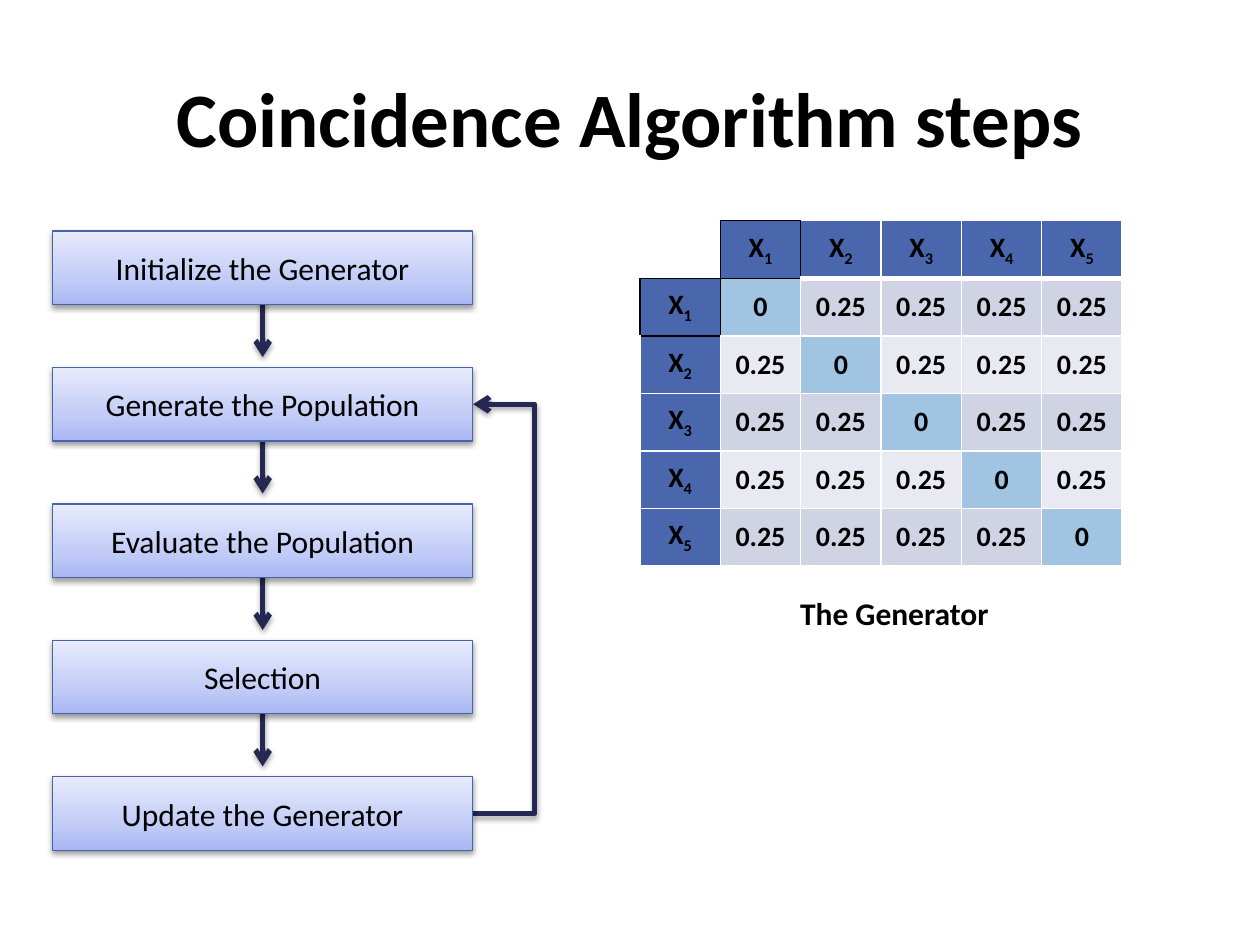
import copy

import pptx
import pptx.dml.color
import pptx.enum.shapes
import pptx.enum.text
import pptx.oxml
import pptx.oxml.ns
import pptx.util

Cm = pptx.util.Cm
Pt = pptx.util.Pt
RGBColor = pptx.dml.color.RGBColor
CENTER = pptx.enum.text.PP_ALIGN.CENTER
MIDDLE = pptx.enum.text.MSO_ANCHOR.MIDDLE
CONNECTOR = pptx.enum.shapes.MSO_CONNECTOR
qn = pptx.oxml.ns.qn
NS = pptx.oxml.ns.nsdecls("a")

BLACK = RGBColor(0x00, 0x00, 0x00)
WHITE = RGBColor(0xFF, 0xFF, 0xFF)
ARROW = RGBColor(0x24, 0x28, 0x52)
BOX_LINE = RGBColor(0x46, 0x63, 0xAB)
HEADER = RGBColor(0x4A, 0x66, 0xAC)
DIAGONAL = RGBColor(0xA1, 0xC4, 0xE3)
BAND_DARK = RGBColor(0xD0, 0xD3, 0xE3)
BAND_LIGHT = RGBColor(0xE9, 0xEA, 0xF1)
GRADIENT = [
    (0, RGBColor(0xA8, 0xB7, 0xF4)),
    (0.35, RGBColor(0xC2, 0xCC, 0xF6)),
    (1, RGBColor(0xE7, 0xEB, 0xFD)),
]

TITLE = "Coincidence Algorithm steps"
STEPS = [
    "Initialize the Generator",
    "Generate the Population",
    "Evaluate the Population",
    "Selection",
    "Update the Generator",
]
CAPTION = "The Generator"
GENERATOR = [
    ["0", "0.25", "0.25", "0.25", "0.25"],
    ["0.25", "0", "0.25", "0.25", "0.25"],
    ["0.25", "0.25", "0", "0.25", "0.25"],
    ["0.25", "0.25", "0.25", "0", "0.25"],
    ["0.25", "0.25", "0.25", "0.25", "0"],
]

BOX_LEFT, BOX_TOP, BOX_W, BOX_H, PITCH = 1.06, 4.66, 8.47, 1.48, 2.75
ARROW_START, ARROW_LENGTH = 1.27, 1.27
LOOP_W, LOOP_OFFSET = 0.01, 1.25
TABLE_LEFT, TABLE_TOP, COL_W, ROW_H = 12.9, 4.45, 1.62, 1.16
OUTLINED = {(0, 1), (1, 0)}
SIDES = {"L": (0, -1), "R": (0, 1), "T": (-1, 0), "B": (1, 0)}


def style_run(r, size, bold=False):
    r.font.name = "Calibri"
    r.font.size = Pt(size)
    r.font.bold = bold
    r.font.color.rgb = BLACK


def add_shadow(sp, distance, opacity):
    spPr = sp._element.spPr
    spPr.append(pptx.oxml.parse_xml(
        f'<a:effectLst {NS}><a:outerShdw blurRad="{Pt(3.1)}" dist="{Pt(distance)}" '
        f'dir="5400000" rotWithShape="0"><a:srgbClr val="{BLACK}">'
        f'<a:alpha val="{opacity * 1000}"/></a:srgbClr></a:outerShdw></a:effectLst>'))


def add_arrow(slide, kind, x1, y1, x2, y2):
    sp = slide.shapes.add_connector(kind, Cm(x1), Cm(y1), Cm(x2), Cm(y2))
    sp.line.color.rgb = ARROW
    sp.line.width = Pt(3)
    sp.line._get_or_add_ln().append(
        pptx.oxml.parse_xml(f'<a:tailEnd {NS} type="arrow"/>'))
    add_shadow(sp, 1.8, 35)
    return sp


def add_loop(slide, x, y1, y2):
    sp = add_arrow(slide, CONNECTOR.ELBOW, x, y1, x + LOOP_W, y2)
    bend = round(LOOP_OFFSET / LOOP_W * 100000)
    guides = sp._element.spPr.find(qn("a:prstGeom")).get_or_add_avLst()
    guides.append(pptx.oxml.parse_xml(f'<a:gd {NS} name="adj1" fmla="val {bend}"/>'))


def add_step(slide, text, top):
    sp = slide.shapes.add_shape(
        pptx.enum.shapes.MSO_SHAPE.RECTANGLE, Cm(BOX_LEFT), Cm(top), Cm(BOX_W), Cm(BOX_H))
    sp.fill.gradient()
    sp.fill.gradient_angle = 90
    stops = sp._element.spPr.find(".//" + qn("a:gsLst"))
    stops.append(copy.deepcopy(stops[0]))
    for stop, (position, color) in zip(sp.fill.gradient_stops, GRADIENT):
        stop.position = position
        stop.color.rgb = color
    sp.line.color.rgb = BOX_LINE
    sp.line.width = Pt(0.75)
    add_shadow(sp, 1.6, 38)
    tf = sp.text_frame
    tf.text = text
    tf.vertical_anchor = MIDDLE
    tf.paragraphs[0].alignment = CENTER
    style_run(tf.paragraphs[0].runs[0], 18)


def set_borders(cell, row, col):
    tcPr = cell._tc.get_or_add_tcPr()
    for side, (dr, dc) in SIDES.items():
        dark = bool({(row, col), (row + dr, col + dc)} & OUTLINED)
        color = BLACK if dark else WHITE
        width = Pt(3 if row == 0 and col > 1 and side == "B" else 1)
        tcPr.append(pptx.oxml.parse_xml(
            f'<a:ln{side} {NS} w="{width}"><a:solidFill><a:srgbClr val="{color}"/>'
            f'</a:solidFill></a:ln{side}>'))


def fill_cell(cell, row, col):
    set_borders(cell, row, col)
    if row == col == 0:
        cell.fill.background()
        return
    cell.fill.solid()
    cell.vertical_anchor = MIDDLE
    p = cell.text_frame.paragraphs[0]
    p.alignment = CENTER
    if row == 0 or col == 0:
        cell.fill.fore_color.rgb = HEADER
        texts = ["X", str(row + col)]
    else:
        band = BAND_DARK if row % 2 else BAND_LIGHT
        cell.fill.fore_color.rgb = DIAGONAL if row == col else band
        texts = [GENERATOR[row - 1][col - 1]]
    for i, text in enumerate(texts):
        r = p.add_run()
        r.text = text
        style_run(r, 16, True)
        if i:
            r._r.get_or_add_rPr().set("baseline", "-25000")


def add_generator(slide):
    n = len(GENERATOR) + 1
    table = slide.shapes.add_table(
        n, n, Cm(TABLE_LEFT), Cm(TABLE_TOP), Cm(n * COL_W), Cm(n * ROW_H)).table
    table.first_row = table.horz_banding = False
    for i in range(n):
        table.columns[i].width = Cm(COL_W)
        table.rows[i].height = Cm(ROW_H)
        for j in range(n):
            fill_cell(table.cell(i, j), i, j)


def main():
    prs = pptx.Presentation()
    prs.slide_width, prs.slide_height = Cm(25.4), Cm(19.05)
    slide = prs.slides.add_slide(prs.slide_layouts[5])

    title = slide.shapes.title
    title.left, title.top, title.width, title.height = Cm(1.27), Cm(0.76), Cm(22.86), Cm(3.17)
    title.text_frame.text = TITLE
    title.text_frame.vertical_anchor = MIDDLE
    title.text_frame.paragraphs[0].alignment = CENTER
    style_run(title.text_frame.paragraphs[0].runs[0], 44, True)

    tops = [BOX_TOP + i * PITCH for i in range(len(STEPS))]
    center = BOX_LEFT + BOX_W / 2
    for top in tops[:-1]:
        start = top + ARROW_START
        add_arrow(slide, CONNECTOR.STRAIGHT, center, start, center, start + ARROW_LENGTH)
    add_loop(slide, BOX_LEFT + BOX_W, tops[-1] + BOX_H / 2, tops[1] + BOX_H / 2)
    for text, top in zip(STEPS, tops):
        add_step(slide, text, top)

    add_generator(slide)

    tf = slide.shapes.add_textbox(Cm(15.88), Cm(11.86), Cm(5.03), Cm(1.02)).text_frame
    tf.text = CAPTION
    tf.word_wrap = False
    tf.auto_size = pptx.enum.text.MSO_AUTO_SIZE.SHAPE_TO_FIT_TEXT
    style_run(tf.paragraphs[0].runs[0], 18, True)

    prs.save("out.pptx")


if __name__ == "__main__":
    main()
